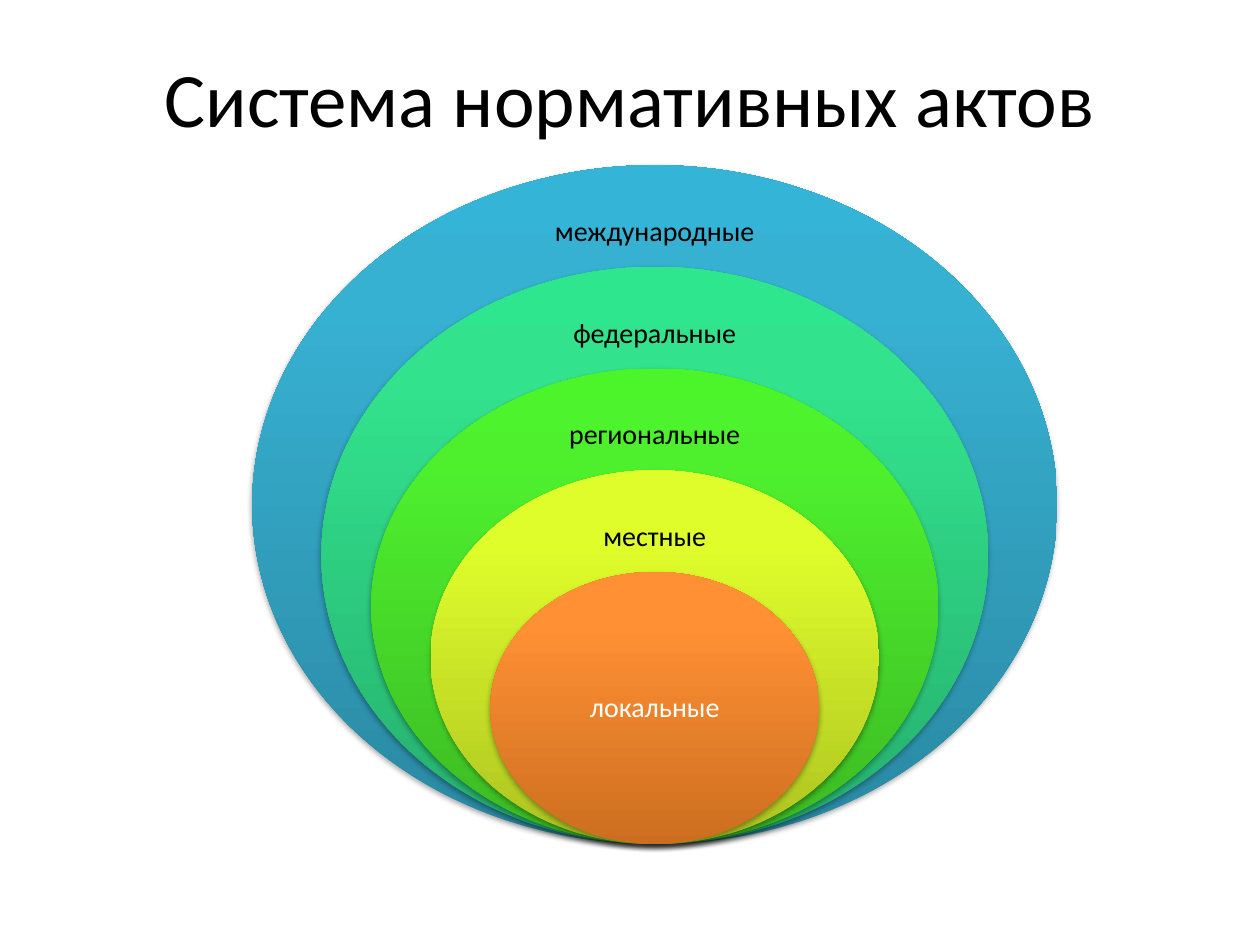
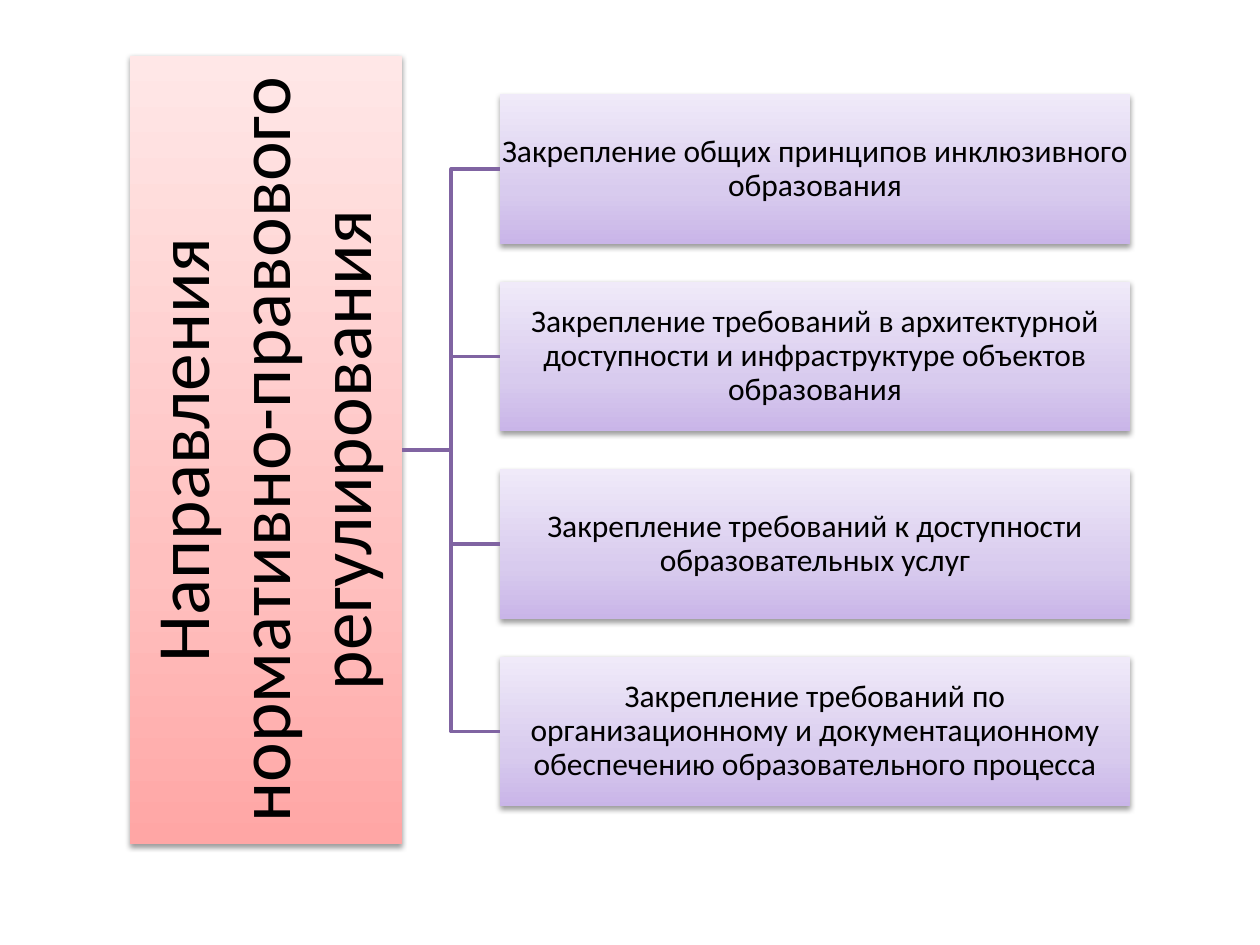
from lxml import etree
from pptx import Presentation
from pptx.dml.color import RGBColor
from pptx.enum.shapes import MSO_CONNECTOR, MSO_SHAPE
from pptx.enum.text import MSO_ANCHOR, PP_ALIGN
from pptx.oxml import parse_xml
from pptx.oxml.ns import nsdecls, qn
from pptx.util import Cm, Pt

FONT = "Calibri"
BLACK, WHITE, PURPLE = "000000", "FFFFFF", "8064A2"
PINK_STOPS = [(0, "FFA6A5"), (35, "FFC0BF"), (100, "FFE7E7")]
LILAC_STOPS = [(0, "C9B5E8"), (35, "D8CBEE"), (100, "F0EAF9")]


def add_gradient_shape(s, kind, box, stops, shadow_alpha, shadow_dist):
    """Add a borderless shape with an upward gradient and a soft shadow below."""
    sp = s.shapes.add_shape(kind, *[Cm(v) for v in box])
    sp.line.fill.background()
    sp.fill.gradient()
    sp.fill.gradient_angle = 90
    spPr = sp._element.spPr
    gs_list = spPr.find(qn("a:gradFill")).find(qn("a:gsLst"))
    for gs in list(gs_list):
        gs_list.remove(gs)
    for pos, color in stops:
        gs = etree.SubElement(gs_list, qn("a:gs"), pos=str(pos * 1000))
        etree.SubElement(gs, qn("a:srgbClr"), val=color)
    sp.shadow.inherit = False
    spPr.find(qn("a:effectLst")).append(parse_xml(
        f'<a:outerShdw {nsdecls("a")} blurRad="40000" dist="{shadow_dist}" dir="5400000" rotWithShape="0">'
        f'<a:srgbClr val="{BLACK}"><a:alpha val="{shadow_alpha * 1000}"/></a:srgbClr></a:outerShdw>'))
    return sp


def write_text(sp, text, size, color, inset):
    tf = sp.text_frame
    tf.word_wrap = True
    tf.vertical_anchor = MSO_ANCHOR.MIDDLE
    tf.margin_left = tf.margin_right = tf.margin_top = tf.margin_bottom = Cm(inset)
    p = tf.paragraphs[0]
    p.alignment = PP_ALIGN.CENTER
    p.line_spacing = 0.9
    p.font.name, p.font.size = FONT, Pt(size)
    p.font.color.rgb = RGBColor.from_string(color)
    r = p.add_run()
    r.text = text
    return r


prs = Presentation()
prs.slide_width, prs.slide_height = Cm(25.4), Cm(19.05)

# Slide 1: nested ellipses that share a centre line and a bottom
s = prs.slides.add_slide(prs.slide_layouts[5])
title = s.shapes.title
title.left, title.top, title.width, title.height = Cm(1.27), Cm(0.76), Cm(22.86), Cm(2.36)
title.text_frame.text = "Система нормативных актов"
title.text_frame.vertical_anchor = MSO_ANCHOR.MIDDLE
p = title.text_frame.paragraphs[0]
p.alignment = PP_ALIGN.CENTER
p.font.name, p.font.size = FONT, Pt(44)
p.font.color.rgb = RGBColor.from_string(BLACK)

# label, ellipse width, label width, gradient colours, text outline
levels = [
    ("международные", 16.23, 6.1, ("2A88A2", "37B1D2", "34B4D6"), "002060"),
    ("федеральные", 13.44, 5.79, ("26AE6D", "32E28D", "2EE68E"), "0070C0"),
    ("региональные", 11.43, 5.92, ("3CB923", "4EF02E", "4CF52A"), "4F6228"),
    ("местные", 9.04, 4.88, ("ACC321", "DFFD2B", "E1FF2B"), "E46C0A"),
    ("локальные", 6.63, 4.7, ("CC6E20", "FF9034", "FF9136"), None),
]
CENTER_X, BOTTOM, TOP, TOP_STEP = 13.2, 17.02, 3.33, 2.05
for i, (label, width, label_width, colors, outline) in enumerate(levels):
    top = TOP + i * TOP_STEP
    height = BOTTOM - top
    add_gradient_shape(s, MSO_SHAPE.OVAL, (CENTER_X - width / 2, top, width, height),
                       list(zip((0, 80, 100), colors)), 35, 23000)
    if outline:
        label_top, label_height, color = top + 0.68, 1.35, BLACK
    else:
        label_top, label_height, color = top + height / 4, height / 2, WHITE
    box = s.shapes.add_textbox(Cm(CENTER_X - label_width / 2), Cm(label_top),
                               Cm(label_width), Cm(label_height))
    r = write_text(box, label, 16, color, 0.3)
    if outline:
        r._r.get_or_add_rPr().insert(0, parse_xml(
            f'<a:ln {nsdecls("a")} w="9525"><a:solidFill><a:srgbClr val="{outline}"/></a:solidFill></a:ln>'))

# Slide 2: one root box with four branches
s = prs.slides.add_slide(prs.slide_layouts[6])
root = add_gradient_shape(s, MSO_SHAPE.RECTANGLE, (2.62, 1.12, 5.49, 15.9), PINK_STOPS, 38, 20000)
write_text(root, "Направления нормативно-правового регулирования", 43, BLACK, 0.08)
root.text_frame._txBody.bodyPr.set("vert", "vert270")

directions = [
    "Закрепление общих принципов инклюзивного образования",
    "Закрепление требований в архитектурной доступности и инфраструктуре объектов образования",
    "Закрепление требований к доступности образовательных услуг",
    "Закрепление требований по организационному и документационному обеспечению "
    "образовательного процесса",
]
for i, text in enumerate(directions):
    branch = add_gradient_shape(s, MSO_SHAPE.RECTANGLE, (10.08, 1.9 + i * 3.78, 12.7, 3.02),
                                LILAC_STOPS, 38, 20000)
    write_text(branch, text, 18, BLACK, 0.03)
    link = s.shapes.add_connector(MSO_CONNECTOR.ELBOW, 0, 0, 0, 0)
    link.begin_connect(root, 3)
    link.end_connect(branch, 1)
    link.line.color.rgb = RGBColor.from_string(PURPLE)
    link.line.width = Pt(2)
    etree.SubElement(link._element.spPr, qn("a:effectLst"))

prs.save("out.pptx")
